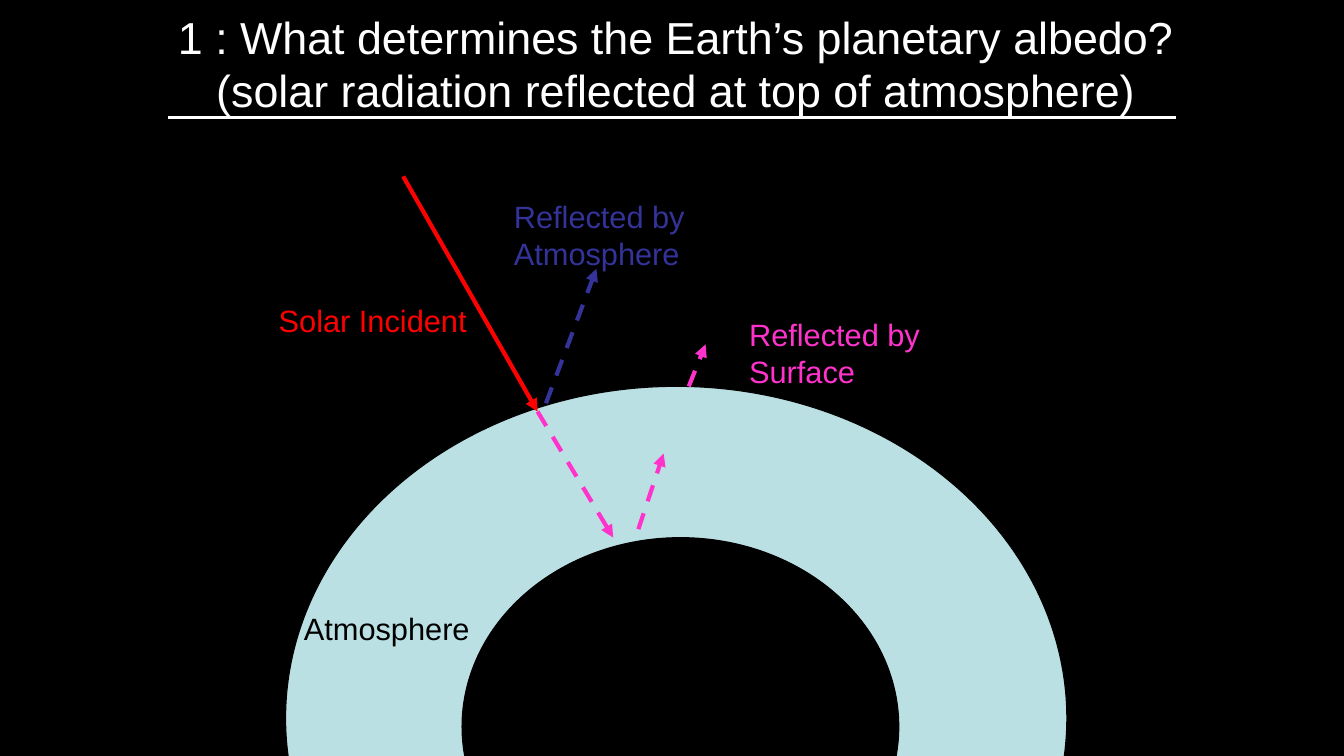
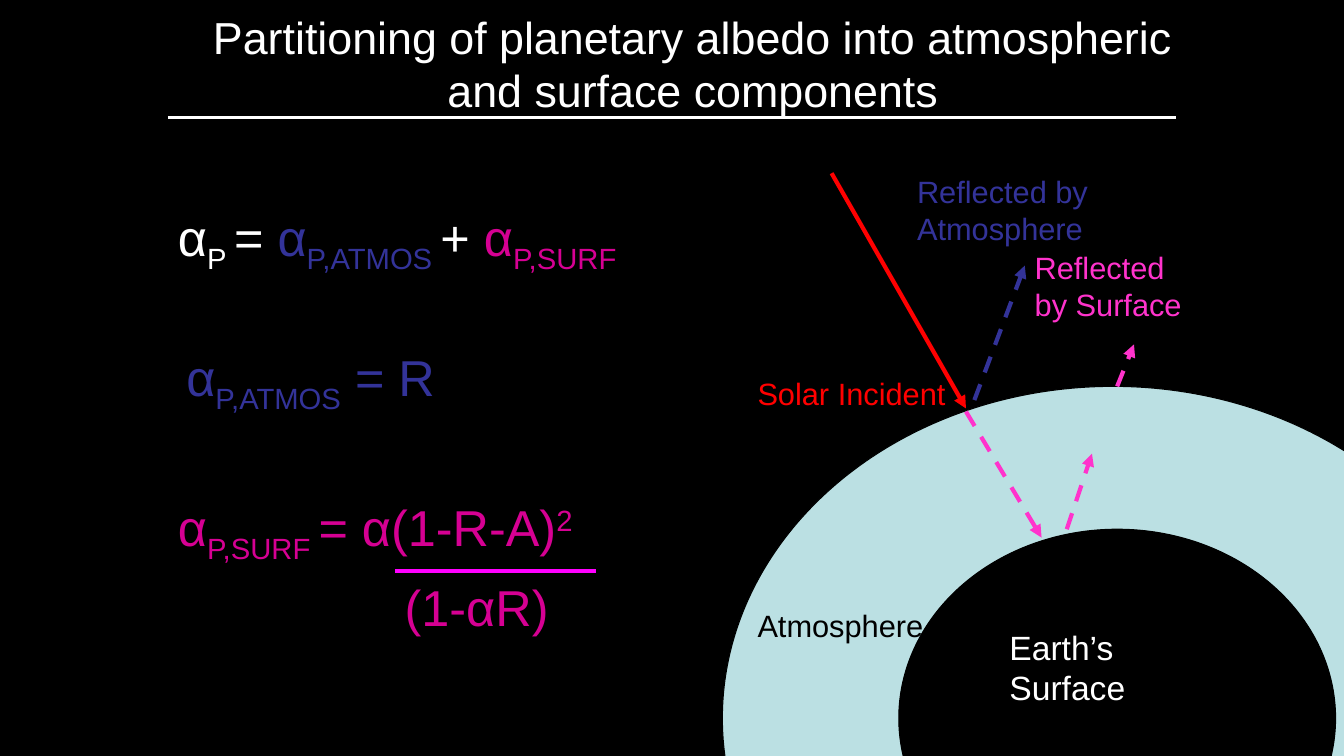
from dataclasses import dataclass

from pptx import Presentation
from pptx.dml.color import RGBColor
from pptx.enum.dml import MSO_LINE
from pptx.enum.shapes import MSO_CONNECTOR, MSO_SHAPE
from pptx.enum.text import MSO_ANCHOR, MSO_AUTO_SIZE, PP_ALIGN
from pptx.oxml.ns import qn
from pptx.oxml.xmlchemy import OxmlElement
from pptx.presentation import Presentation as Deck
from pptx.slide import Slide
from pptx.util import Emu, Pt

STRAIGHT = MSO_CONNECTOR.STRAIGHT
OVAL = MSO_SHAPE.OVAL
DASH = MSO_LINE.DASH
MIDDLE = MSO_ANCHOR.MIDDLE
CENTER = PP_ALIGN.CENTER
NO_FIT = MSO_AUTO_SIZE.NONE
GROW = MSO_AUTO_SIZE.SHAPE_TO_FIT_TEXT

EMU_PER_PX = 9525
TITLE_ONLY = 5
SUBSCRIPT = -25
SUPERSCRIPT = 30


@dataclass(frozen=True)
class Theme:
    font: str = "Arial"
    black: str = "000000"
    white: str = "FFFFFF"
    air: str = "BBE0E3"
    solar: str = "FF0000"
    atmosphere: str = "333399"
    surface: str = "FF33CC"
    surface_term: str = "D60093"
    fraction: str = "FF00FF"
    title_size: int = 32
    formula_size: int = 36
    earth_size: int = 24
    label_size: int = 22
    outline: float = 0.75
    rule: float = 1.75
    fraction_rule: float = 2.5
    ray: float = 3


THEME = Theme()


@dataclass(frozen=True)
class Frame:
    left: int
    top: int
    width: int
    height: int

    def shifted(self, right: int, down: int) -> "Frame":
        return Frame(self.left + right, self.top + down, self.width, self.height)


@dataclass(frozen=True)
class Span:
    text: str
    color: str
    baseline: int = 0


@dataclass(frozen=True)
class Label:
    text: str
    frame: Frame
    color: str
    size: int = THEME.label_size


@dataclass(frozen=True)
class Line:
    x1: int
    y1: int
    x2: int
    y2: int
    color: str
    width: float = THEME.ray
    dashed: bool = False
    arrow: bool = False

    def shifted(self, right: int, down: int) -> "Line":
        return Line(self.x1 + right, self.y1 + down, self.x2 + right, self.y2 + down,
                    self.color, self.width, self.dashed, self.arrow)


TITLE_RULE = Line(160, 112, 1120, 112, THEME.white, THEME.rule)
AIR = Frame(272, 368, 744, 632)
EARTH = Frame(440, 512, 416, 360)
INCOMING_RAYS = (
    Line(384, 168, 512, 392, THEME.solar, arrow=True),
    Line(520, 384, 568, 256, THEME.atmosphere, dashed=True, arrow=True),
)
SURFACE_RAYS = (
    Line(512, 392, 584, 512, THEME.surface, dashed=True, arrow=True),
    Line(608, 504, 632, 432, THEME.surface, dashed=True, arrow=True),
    Line(656, 368, 672, 328, THEME.surface, dashed=True, arrow=True),
)

ALBEDO_LABELS = (
    Label("Atmosphere", Frame(280, 576, 216, 45), THEME.black),
    Label("Solar Incident", Frame(256, 283, 208, 45), THEME.solar),
    Label("Reflected by Atmosphere", Frame(480, 184, 240, 80), THEME.atmosphere),
    Label("Reflected by Surface", Frame(704, 296, 184, 80), THEME.surface),
)
PARTITION_LABELS = (
    Label("Earth’s Surface", Frame(952, 592, 200, 87), THEME.white, THEME.earth_size),
    Label("Atmosphere", Frame(712, 573, 216, 45), THEME.black),
    Label("Solar Incident", Frame(712, 352, 208, 45), THEME.solar),
    Label("Reflected by Atmosphere", Frame(864, 160, 240, 80), THEME.atmosphere),
    Label("Reflected by Surface", Frame(976, 232, 168, 80), THEME.surface),
)
FORMULAS = (
    (Frame(160, 192, 504, 67), (
        Span("α", THEME.white),
        Span("P ", THEME.white, SUBSCRIPT),
        Span("= ", THEME.white),
        Span("α", THEME.atmosphere),
        Span("P,ATMOS ", THEME.atmosphere, SUBSCRIPT),
        Span("+ ", THEME.white),
        Span("α", THEME.surface_term),
        Span("P,SURF", THEME.surface_term, SUBSCRIPT),
    )),
    (Frame(168, 325, 504, 67), (
        Span("α", THEME.atmosphere),
        Span("P,ATMOS", THEME.atmosphere, SUBSCRIPT),
        Span(" = R", THEME.atmosphere),
    )),
    (Frame(160, 468, 504, 67), (
        Span("α", THEME.surface_term),
        Span("P,SURF ", THEME.surface_term, SUBSCRIPT),
        Span("= α(1-R-A)", THEME.surface_term),
        Span("2", THEME.surface_term, SUPERSCRIPT),
    )),
    (Frame(376, 544, 208, 67), (Span("(1-αR)", THEME.surface_term),)),
)
FRACTION_BAR = Line(376, 544, 568, 544, THEME.fraction, THEME.fraction_rule)


def px(length: int) -> Emu:
    return Emu(length * EMU_PER_PX)


def place(frame: Frame) -> tuple[Emu, Emu, Emu, Emu]:
    return px(frame.left), px(frame.top), px(frame.width), px(frame.height)


def rgb(color: str) -> RGBColor:
    return RGBColor.from_string(color)


def set_font(font, size: int, color: str | None = None) -> None:
    font.name = THEME.font
    font.size = Pt(size)
    if color:
        font.color.rgb = rgb(color)


def add_line(page: Slide, line: Line) -> None:
    connector = page.shapes.add_connector(
        STRAIGHT, px(line.x1), px(line.y1), px(line.x2), px(line.y2))
    connector.line.color.rgb = rgb(line.color)
    connector.line.width = Pt(line.width)
    if line.dashed:
        connector.line.dash_style = DASH
    properties = connector.element.spPr
    if line.arrow:
        head = OxmlElement("a:tailEnd")
        head.set("type", "triangle")
        properties.find(qn("a:ln")).append(head)
    properties.append(OxmlElement("a:effectLst"))


def add_ellipse(page: Slide, frame: Frame, color: str) -> None:
    ellipse = page.shapes.add_shape(OVAL, *place(frame))
    ellipse.shadow.inherit = False
    ellipse.fill.solid()
    ellipse.fill.fore_color.rgb = rgb(color)
    ellipse.line.color.rgb = rgb(THEME.black)
    ellipse.line.width = Pt(THEME.outline)


def add_text_box(page: Slide, frame: Frame):
    box = page.shapes.add_textbox(*place(frame))
    box.text_frame.word_wrap = True
    box.text_frame.auto_size = GROW
    return box.text_frame.paragraphs[0]


def add_label(page: Slide, label: Label) -> None:
    para = add_text_box(page, label.frame)
    para.text = label.text
    set_font(para.font, label.size, label.color)


def add_formula(page: Slide, frame: Frame, spans: tuple[Span, ...]) -> None:
    para = add_text_box(page, frame)
    set_font(para.font, THEME.formula_size)
    for span in spans:
        run = para.add_run()
        run.text = span.text
        run.font.color.rgb = rgb(span.color)
        if span.baseline:
            run._r.get_or_add_rPr().set("baseline", str(span.baseline * 1000))


def add_page(deck: Deck, title: str, frame: Frame) -> Slide:
    page = deck.slides.add_slide(deck.slide_layouts[TITLE_ONLY])
    box = page.shapes.title
    box.left, box.top, box.width, box.height = place(frame)
    box.text_frame.word_wrap = True
    box.text_frame.auto_size = NO_FIT
    box.text_frame.vertical_anchor = MIDDLE
    para = box.text_frame.paragraphs[0]
    para.text = title
    para.alignment = CENTER
    set_font(para.font, THEME.title_size, THEME.white)
    add_line(page, TITLE_RULE)
    return page


def add_diagram(page: Slide, air: Frame, earth: Frame,
                rays: tuple[Line, ...], labels: tuple[Label, ...]) -> None:
    add_ellipse(page, air, THEME.air)
    add_ellipse(page, earth, THEME.black)
    for ray in rays:
        add_line(page, ray)
    for label in labels:
        add_label(page, label)


def build_albedo_page(deck: Deck) -> None:
    page = add_page(
        deck,
        "1 : What determines the Earth’s planetary albedo? "
        "(solar radiation reflected at top of atmosphere)",
        Frame(152, 0, 984, 120))
    add_diagram(page, AIR, EARTH, INCOMING_RAYS + SURFACE_RAYS, ALBEDO_LABELS)


def build_partition_page(deck: Deck) -> None:
    page = add_page(
        deck,
        "Partitioning of planetary albedo into atmospheric and surface components",
        Frame(184, 0, 952, 120))
    rays = (tuple(ray.shifted(408, -3) for ray in INCOMING_RAYS)
            + tuple(ray.shifted(408, 0) for ray in SURFACE_RAYS))
    add_diagram(page, AIR.shifted(416, 0), EARTH.shifted(416, -8), rays, PARTITION_LABELS)
    for frame, spans in FORMULAS:
        add_formula(page, frame, spans)
    add_line(page, FRACTION_BAR)


def main() -> None:
    deck = Presentation()
    deck.slide_width, deck.slide_height = px(1280), px(720)
    backdrop = deck.slide_master.background.fill
    backdrop.solid()
    backdrop.fore_color.rgb = rgb(THEME.black)
    build_albedo_page(deck)
    build_partition_page(deck)
    deck.save("out.pptx")


if __name__ == "__main__":
    main()
